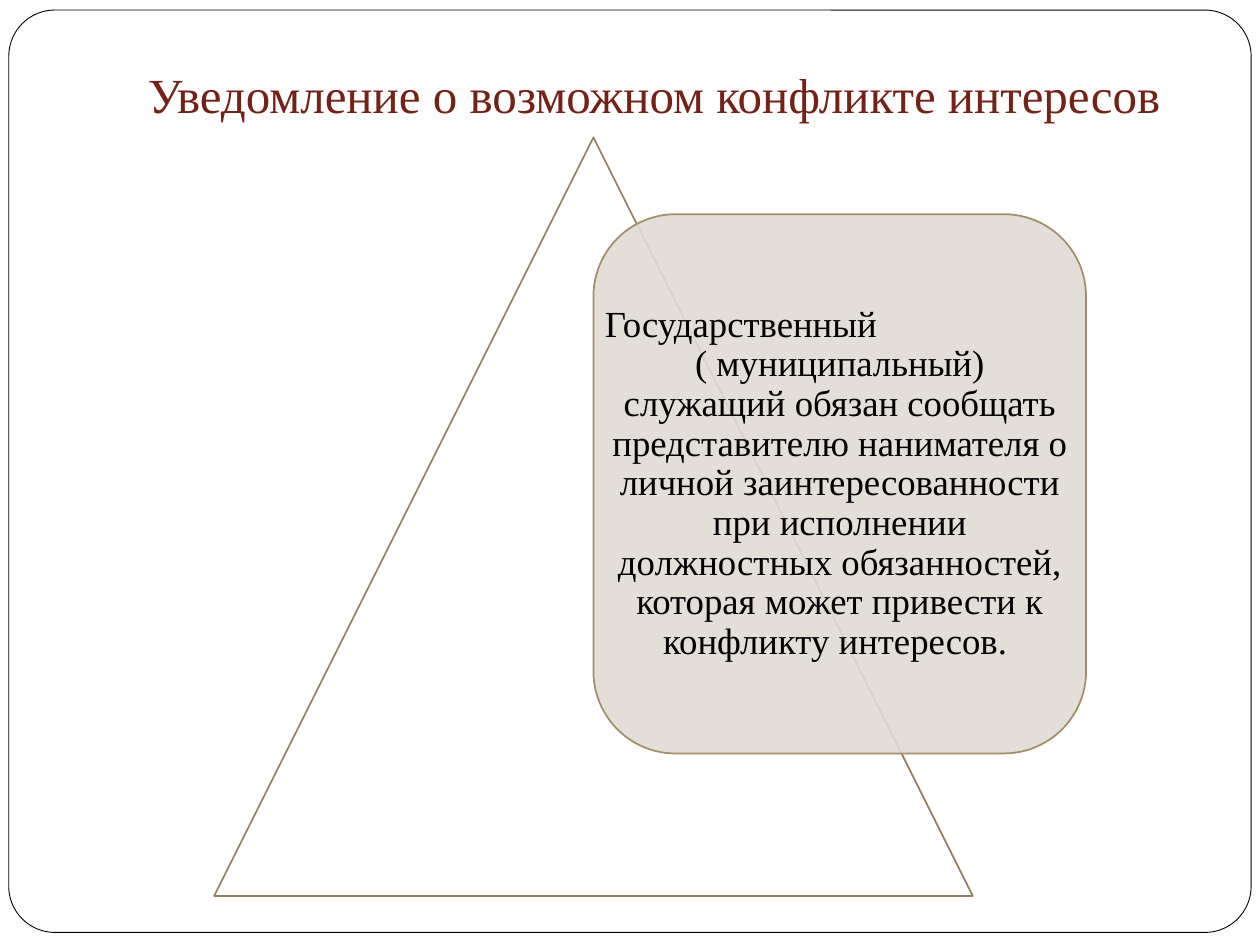
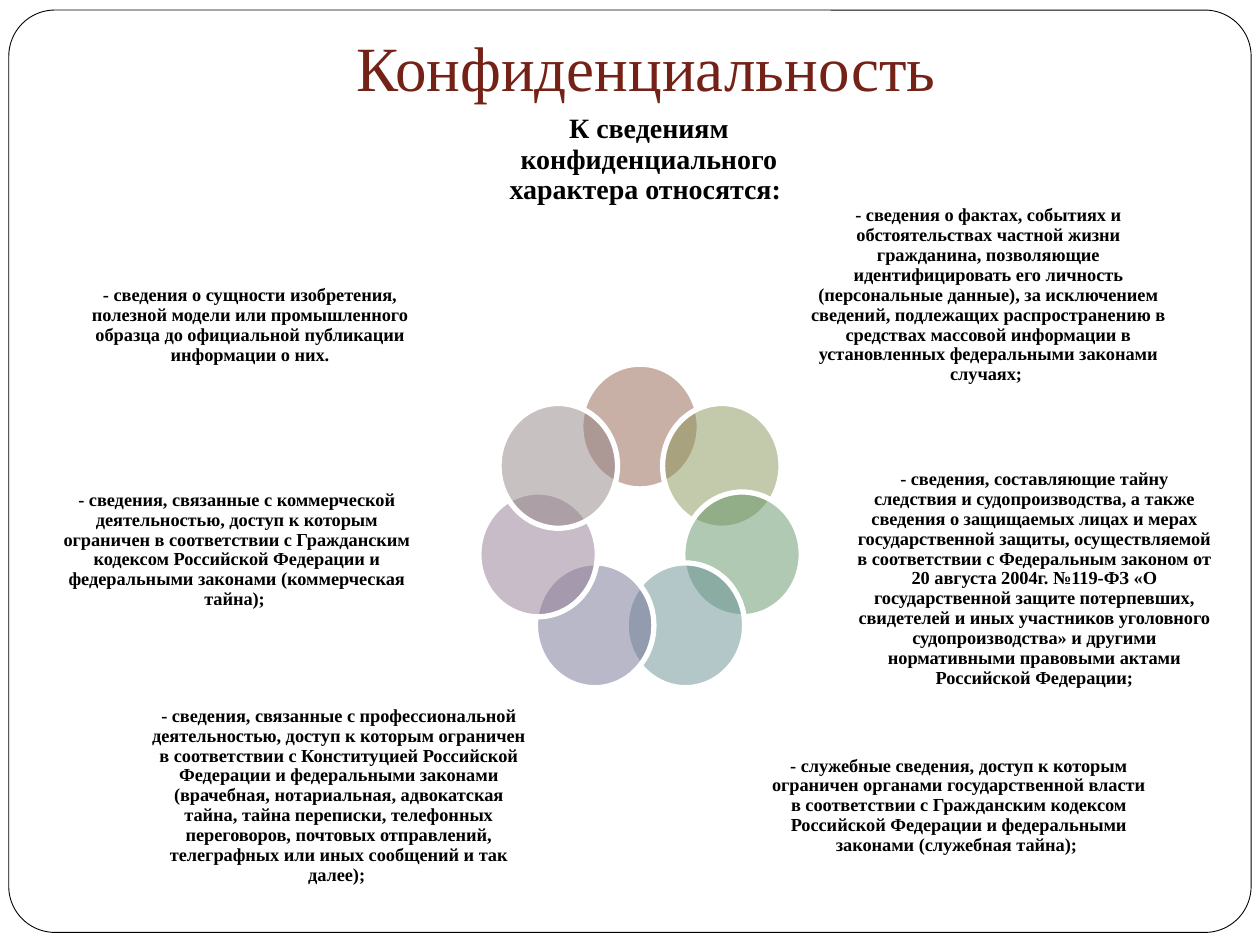
from math import cos, pi, sin

from lxml import etree
from pptx import Presentation
from pptx.dml.color import RGBColor
from pptx.enum.shapes import MSO_SHAPE
from pptx.enum.text import MSO_ANCHOR, MSO_AUTO_SIZE, PP_ALIGN
from pptx.oxml.ns import qn
from pptx.util import Inches, Pt

ROUNDED = MSO_SHAPE.ROUNDED_RECTANGLE
TRIANGLE = MSO_SHAPE.ISOSCELES_TRIANGLE
OVAL = MSO_SHAPE.OVAL
MIDDLE, BOTTOM = MSO_ANCHOR.MIDDLE, MSO_ANCHOR.BOTTOM
CENTER, LEFT = PP_ALIGN.CENTER, PP_ALIGN.LEFT
NO_FIT = MSO_AUTO_SIZE.NONE

COLUMNS, ROWS = 100, 75
TITLE_ONLY = 5
FONT = "Times New Roman"
COLORS = {
    "paper": "FFFFFF", "ink": "000000", "title": "742217",
    "triangle": "938160", "card": "E0DBD4", "card_line": "A28E6A",
}
PETAL_COLORS = ["956251", "899559", "609568", "689195", "737294", "927B92", "918485"]
PETAL_SIZE = (9.4, 9.9)
RING_CENTER, RING_RADIUS = (50.8, 42.15), 8.3

NOTICE = [
    ("Государственный", LEFT),
    ("( муниципальный)\vслужащий обязан сообщать представителю нанимателя о личной "
     "заинтересованности при исполнении должностных обязанностей, которая может "
     "привести к конфликту интересов. ", CENTER),
]
HEADING = "К сведениям конфиденциального характера относятся: "
SECRETS = [
    ((64.1, 14.8, 28.7, 17.3),
     "- сведения о фактах, событиях и обстоятельствах частной жизни гражданина, "
     "позволяющие идентифицировать его личность (персональные данные), за исключением "
     "сведений, подлежащих распространению в средствах массовой информации в "
     "установленных федеральными законами случаях; "),
    ((68, 36.7, 28.2, 18.5),
     "- сведения, составляющие тайну следствия и судопроизводства, а также сведения о "
     "защищаемых лицах и мерах государственной защиты, осуществляемой в соответствии с "
     "Федеральным законом от 20 августа 2004г. №119-ФЗ «О государственной защите "
     "потерпевших, свидетелей и иных участников уголовного судопроизводства» и другими "
     "нормативными правовыми актами Российской Федерации;"),
    ((60.9, 55.5, 30.4, 16.9),
     "- служебные сведения, доступ к которым ограничен органами государственной власти "
     "в соответствии с Гражданским кодексом Российской Федерации и федеральными "
     "законами (служебная тайна); "),
    ((11.7, 54.7, 30.4, 16.9),
     "- сведения, связанные с профессиональной деятельностью, доступ к которым ограничен "
     "в соответствии с Конституцией Российской Федерации и федеральными законами "
     "(врачебная, нотариальная, адвокатская тайна, тайна переписки, телефонных "
     "переговоров, почтовых отправлений, телеграфных или иных сообщений и так далее); "),
    ((4.7, 34.4, 28.2, 18.5),
     "- сведения, связанные с коммерческой деятельностью, доступ к которым ограничен в "
     "соответствии с Гражданским кодексом Российской Федерации и федеральными законами "
     "(коммерческая тайна); "),
    ((5.5, 17.2, 28.7, 17.3),
     "- сведения о сущности изобретения, полезной модели или промышленного образца до "
     "официальной публикации информации о них."),
]


def write_text(frame, paragraphs, size, color="ink", bold=False, anchor=MIDDLE,
               margins=(0, 0, 0, 0), spacing=0.9):
    """Fill a text frame with (text, alignment) paragraphs in one format."""
    frame.word_wrap = True
    frame.auto_size = NO_FIT
    frame.vertical_anchor = anchor
    (frame.margin_left, frame.margin_top,
     frame.margin_right, frame.margin_bottom) = map(Inches, margins)
    for index, (text, alignment) in enumerate(paragraphs):
        paragraph = frame.add_paragraph() if index else frame.paragraphs[0]
        paragraph.text = text
        paragraph.alignment = alignment
        paragraph.line_spacing = spacing
        for run in paragraph.runs:
            run.font.name = FONT
            run.font.size = Pt(size)
            run.font.bold = bold
            run.font.color.rgb = RGBColor.from_string(COLORS[color])


class Deck:
    """Holds the presentation, its shared style and the current slide."""

    def __init__(self):
        """Start an empty presentation and set its grid."""
        self.presentation = Presentation()
        self.presentation.slide_width = Inches(10)
        self.presentation.slide_height = Inches(7.5)
        self.column = self.presentation.slide_width / COLUMNS
        self.row = self.presentation.slide_height / ROWS
        self.slide = None

    def place(self, box):
        """Turn a box in columns and rows into slide lengths."""
        units = (self.column, self.row) * 2
        return [round(length * unit) for length, unit in zip(box, units)]

    def add_slide(self, title, box, size):
        """Add a framed slide with a formatted title."""
        layout = self.presentation.slide_layouts[TITLE_ONLY]
        self.slide = self.presentation.slides.add_slide(layout)
        frame = self.add_shape(ROUNDED, (0.7, 0.8, 98.6, 73.2), "FFFFFF",
                               COLORS["ink"], width=0.5)
        frame.adjustments[0] = 0.05
        self.slide.shapes._spTree.insert(2, frame._element)
        heading = self.slide.shapes.title
        heading.left, heading.top, heading.width, heading.height = self.place(box)
        write_text(heading.text_frame, [(title, CENTER)], size, color="title",
                   anchor=BOTTOM, margins=(0.1, 0.05, 0.1, 0.1), spacing=1.0)

    def add_shape(self, kind, box, fill, line, width=1.0, opacity=100):
        """Draw a filled and outlined preset shape."""
        shape = self.slide.shapes.add_shape(kind, *self.place(box))
        shape.shadow.inherit = False
        shape.fill.solid()
        shape.fill.fore_color.rgb = RGBColor.from_string(fill)
        shape.line.color.rgb = RGBColor.from_string(line)
        shape.line.width = Pt(width)
        if opacity < 100:
            color = shape._element.spPr.find(qn("a:solidFill"))[0]
            etree.SubElement(color, qn("a:alpha"), val=str(opacity * 1000))
        return shape

    def add_text(self, box, paragraphs, size, **style):
        """Add a wrapped text box."""
        text_box = self.slide.shapes.add_textbox(*self.place(box))
        write_text(text_box.text_frame, paragraphs, size, **style)

    def add_ring(self, colors):
        """Draw translucent petals evenly around the ring, clockwise from the top."""
        width, height = PETAL_SIZE
        for index, color in enumerate(colors):
            angle = 2 * pi * index / len(colors)
            left = RING_CENTER[0] + RING_RADIUS * sin(angle) - width / 2
            top = RING_CENTER[1] - RING_RADIUS * cos(angle) - height / 2
            self.add_shape(OVAL, (left, top, width, height), color,
                           COLORS["paper"], width=3, opacity=50)


def build_notice(deck):
    """Build the slide about reporting a conflict of interest."""
    deck.add_slide("Уведомление о возможном конфликте интересов",
                   (9.4, 3.9, 85, 6.9), 28)
    deck.add_shape(TRIANGLE, (17, 10.9, 60.2, 60.2), COLORS["paper"], COLORS["triangle"])
    card = (47.1, 17, 39.1, 42.8)
    deck.add_shape(ROUNDED, card, COLORS["card"], COLORS["card_line"], opacity=90)
    deck.add_text(card, NOTICE, 21, margins=(0.09,) * 4)


def build_secrets(deck):
    """Build the slide listing confidential information."""
    deck.add_slide("Конфиденциальность ", (9.4, 1.6, 85, 7.7), 36)
    deck.add_ring(PETAL_COLORS)
    deck.add_text((36.3, 4.8, 30.4, 15.8), [(HEADING, CENTER)], 16, bold=True)
    for box, text in SECRETS:
        deck.add_text(box, [(text, CENTER)], 10.5, bold=True)


def main():
    """Build and save both slides."""
    deck = Deck()
    build_notice(deck)
    build_secrets(deck)
    deck.presentation.save("out.pptx")


if __name__ == "__main__":
    main()
